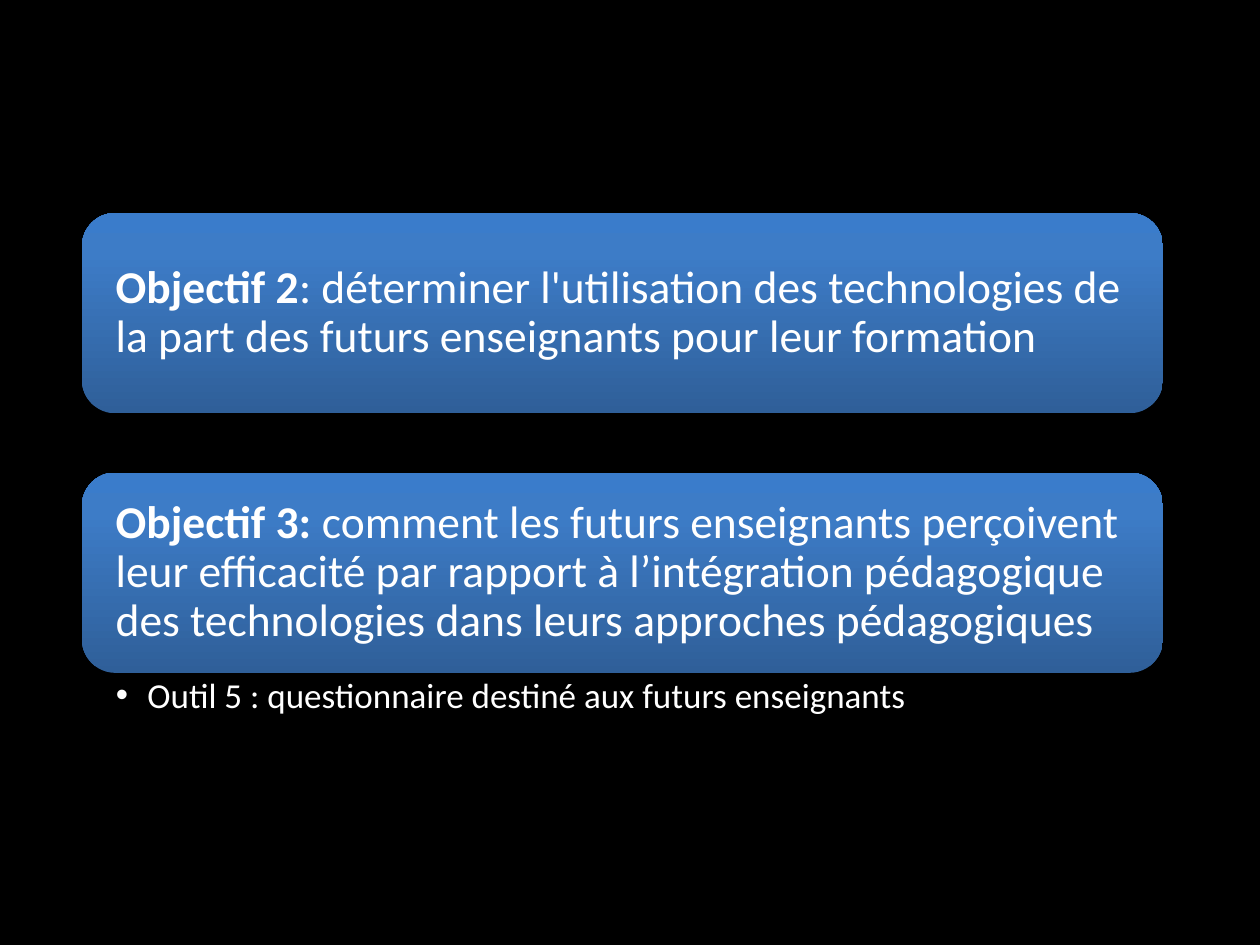
from copy import deepcopy

from lxml import etree
from pptx import Presentation
from pptx.dml.color import RGBColor
from pptx.enum.shapes import MSO_SHAPE
from pptx.enum.text import MSO_ANCHOR, MSO_AUTO_SIZE, PP_ALIGN
from pptx.oxml.ns import qn
from pptx.util import Inches, Pt

ROUNDED = MSO_SHAPE.ROUNDED_RECTANGLE
TOP, MIDDLE = MSO_ANCHOR.TOP, MSO_ANCHOR.MIDDLE
LEFT = PP_ALIGN.LEFT
NO_AUTOFIT = MSO_AUTO_SIZE.NONE

THEME = {
    "font": "Calibri",
    "background": RGBColor.from_string("000000"),
    "text": RGBColor.from_string("FFFFFF"),
    "gradient": [(0, "2F5F99"), (0.8, "3D7CC7"), (1, "3A7CCB")],
    "objective_size": Pt(26),
    "tool_size": Pt(20),
}

# Grid: one column, rows of equal pitch
COLUMN_LEFT, COLUMN_WIDTH = Inches(0.65), Inches(8.58)
FIRST_ROW, ROW_HEIGHT, ROW_PITCH = Inches(1.69), Inches(1.59), Inches(2.06)
TOOL_HEIGHT = Inches(0.47)

OBJECTIVES = [
    ("Objectif 2", ": déterminer l'utilisation des technologies de la part "
     "des futurs enseignants pour leur formation"),
    ("Objectif 3: ", "comment les futurs enseignants perçoivent leur efficacité "
     "par rapport à l’intégration pédagogique des technologies dans leurs "
     "approches pédagogiques"),
]
TOOL = "Outil 5 : questionnaire destiné aux futurs enseignants"


def set_margins(frame, left, right, vertical):
    frame.word_wrap = True
    frame.margin_left, frame.margin_right = Inches(left), Inches(right)
    frame.margin_top = frame.margin_bottom = Inches(vertical)


def style_paragraph(paragraph, size):
    paragraph.alignment = LEFT
    paragraph.line_spacing = 0.9
    paragraph.space_before = Pt(0)
    paragraph.font.name = THEME["font"]
    paragraph.font.size = size
    paragraph.font.color.rgb = THEME["text"]


prs = Presentation()
prs.slide_width, prs.slide_height = Inches(10), Inches(7.5)
slide = prs.slides.add_slide(prs.slide_layouts[1])
slide.background.fill.solid()
slide.background.fill.fore_color.rgb = THEME["background"]

# The slide has no title
title = slide.shapes.title
title.element.getparent().remove(title.element)

# Objective banners
for row, (label, description) in enumerate(OBJECTIVES):
    banner = slide.shapes.add_shape(
        ROUNDED, COLUMN_LEFT, FIRST_ROW + row * ROW_PITCH, COLUMN_WIDTH, ROW_HEIGHT)
    banner.shadow.inherit = False
    banner.line.fill.background()

    # Gradient from bottom to top, with a third stop added
    banner.fill.gradient()
    banner.fill.gradient_angle = 90
    stop_list = banner.element.spPr.find(qn("a:gradFill")).find(qn("a:gsLst"))
    stop_list.append(deepcopy(stop_list[-1]))
    for stop, (position, colour) in zip(banner.fill.gradient_stops, THEME["gradient"]):
        stop.position = position
        stop.color.rgb = RGBColor.from_string(colour)

    objective = banner.text_frame
    set_margins(objective, 0.19, 0.19, 0.19)
    objective.vertical_anchor = MIDDLE
    paragraph = objective.paragraphs[0]
    style_paragraph(paragraph, THEME["objective_size"])
    for words, bold in ((label, True), (description, False)):
        run = paragraph.add_run()
        run.text = words
        run.font.bold = bold

# Tool list under the last banner
tools = slide.placeholders[1]
tools.left, tools.width, tools.height = COLUMN_LEFT, COLUMN_WIDTH, TOOL_HEIGHT
tools.top = FIRST_ROW + ROW_PITCH + ROW_HEIGHT
set_margins(tools.text_frame, 0.27, 0.2, 0.04)
tools.text_frame.auto_size = NO_AUTOFIT
tools.text_frame.vertical_anchor = TOP
item = tools.text_frame.paragraphs[0]
item.text = TOOL
item.level = 1
item_format = item._p.get_or_add_pPr()
item_format.set("marL", str(Inches(0.25)))
item_format.set("indent", str(-Inches(0.25)))
etree.SubElement(item_format, qn("a:buChar"), char="•")
style_paragraph(item, THEME["tool_size"])

prs.save("out.pptx")
